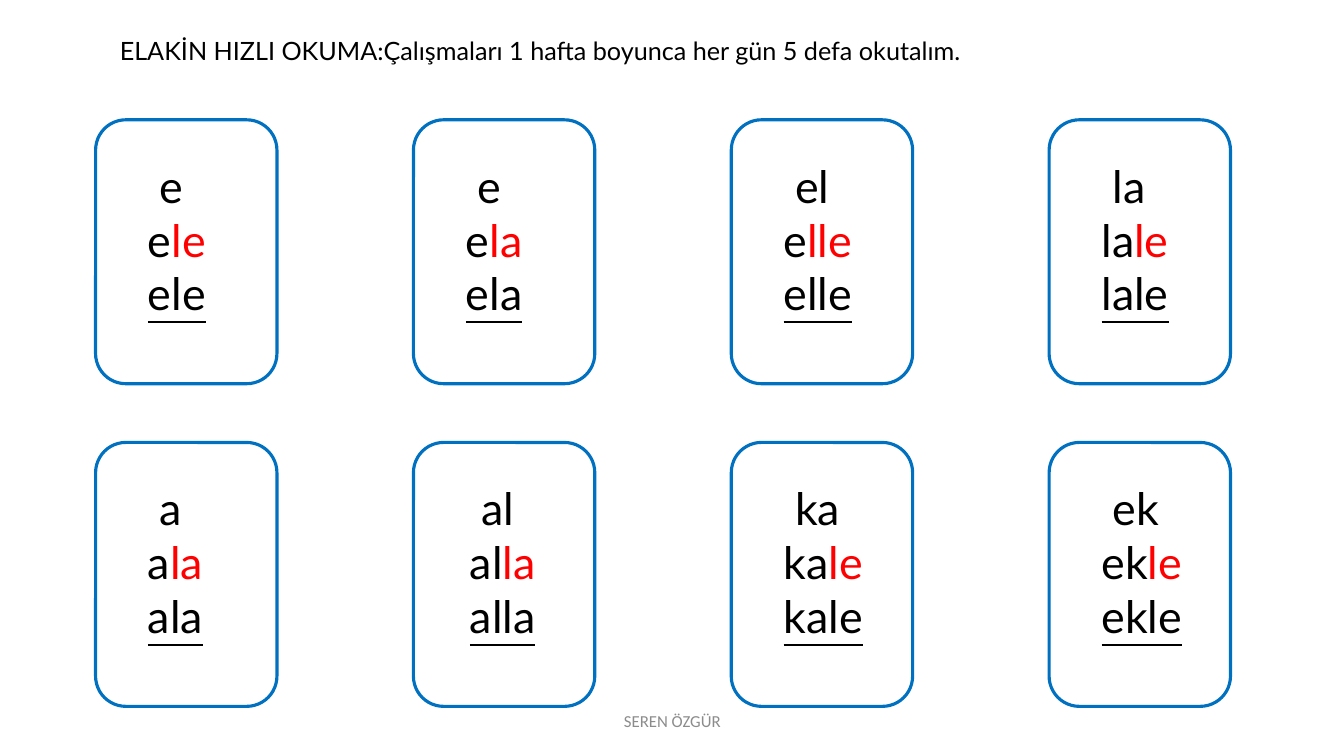
from dataclasses import dataclass

import pptx
import pptx.dml.color
import pptx.enum.shapes
import pptx.enum.text
import pptx.util

Cm = pptx.util.Cm
Pt = pptx.util.Pt
RGB = pptx.dml.color.RGBColor
ALIGN = pptx.enum.text.PP_ALIGN
ANCHOR = pptx.enum.text.MSO_ANCHOR


@dataclass(frozen=True)
class Theme:
    text: RGB = RGB(0x00, 0x00, 0x00)
    accent: RGB = RGB(0xFF, 0x00, 0x00)
    outline: RGB = RGB(0x00, 0x70, 0xC0)
    muted: RGB = RGB(0x8C, 0x8C, 0x8C)
    body_font: str = "Lato"
    footer_font: str = "Calibri"
    title_size: int = 18
    syllable_size: int = 32
    footer_size: int = 12
    outline_width: float = 2.25


THEME = Theme()

COLUMNS = 4
CARD_LEFT, CARD_TOP = 2.41, 3.02
CARD_WIDTH, CARD_HEIGHT = 4.57, 6.65
COLUMN_STEP, ROW_STEP = 8.01, 8.13
TEXT_DX, TEXT_DY = 1.07, 0.85

CARDS = [
    ("e", "e", "le", 0),
    ("e", "e", "la", 0),
    ("el", "e", "lle", 0),
    ("la", "la", "le", 0),
    ("a", "a", "la", 0),
    ("al", "al", "la", 0.1),
    ("ka", "ka", "le", 0),
    ("ek", "ek", "le", 0),
]


def style_run(r, size, color, font=THEME.body_font):
    r.font.name = font
    r.font.size = Pt(size)
    r.font.color.rgb = color


def add_text_box(s, left, top, width, height):
    sp = s.shapes.add_textbox(Cm(left), Cm(top), Cm(width), Cm(height))
    tf = sp.text_frame
    tf.word_wrap = True
    return tf


def add_label(s, text, box, size, color, font, align=ALIGN.LEFT, anchor=ANCHOR.TOP):
    tf = add_text_box(s, *box)
    tf.text = text
    tf.vertical_anchor = anchor
    p = tf.paragraphs[0]
    p.alignment = align
    style_run(p.runs[0], size, color, font)


def add_syllable(p, text, color=THEME.text):
    r = p.add_run()
    r.text = text
    style_run(r, THEME.syllable_size, color)
    return r


def add_frame(s, left, top):
    sp = s.shapes.add_shape(
        pptx.enum.shapes.MSO_SHAPE.ROUNDED_RECTANGLE,
        Cm(left), Cm(top), Cm(CARD_WIDTH), Cm(CARD_HEIGHT),
    )
    sp.shadow.inherit = False
    sp.fill.background()
    sp.line.color.rgb = THEME.outline
    sp.line.width = Pt(THEME.outline_width)


def add_card(s, left, top, opening, stem, ending, shift):
    add_frame(s, left, top)
    tf = add_text_box(s, left + TEXT_DX + shift, top + TEXT_DY, 2.97, 4.37)
    p = tf.paragraphs[0]
    add_syllable(p, " " + opening)
    p.add_line_break()
    add_syllable(p, stem)
    add_syllable(p, ending, THEME.accent)
    p.add_line_break()
    add_syllable(p, stem + ending).font.underline = True


def main():
    prs = pptx.Presentation()
    prs.slide_width = Cm(33.87)
    prs.slide_height = Cm(19.05)
    s = prs.slides.add_slide(prs.slide_layouts[6])

    for i, card in enumerate(CARDS):
        row, column = divmod(i, COLUMNS)
        add_card(s, CARD_LEFT + column * COLUMN_STEP, CARD_TOP + row * ROW_STEP, *card)

    add_label(
        s, "ELAKİN HIZLI OKUMA:Çalışmaları 1 hafta boyunca her gün 5 defa okutalım.",
        (2.77, 0.76, 24.74, 1.02), THEME.title_size, THEME.text, THEME.body_font,
    )
    add_label(
        s, "SEREN ÖZGÜR", (11.23, 17.65, 11.43, 1.02),
        THEME.footer_size, THEME.muted, THEME.footer_font, ALIGN.CENTER, ANCHOR.MIDDLE,
    )
    prs.save("out.pptx")


if __name__ == "__main__":
    main()
